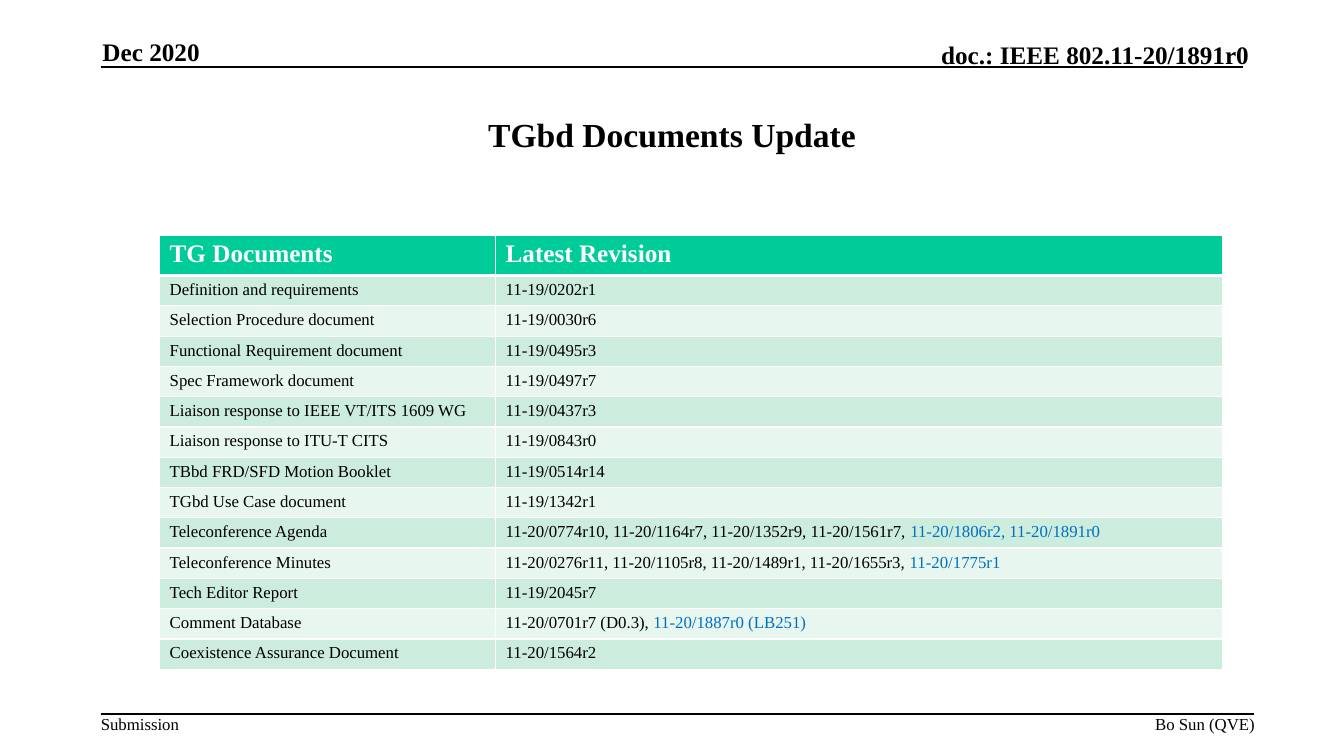
from typing import NamedTuple

from lxml import etree
from pptx import Presentation
from pptx.dml.color import RGBColor
from pptx.enum import shapes, text
from pptx.oxml import ns
from pptx import util as u

# The slide is a grid of 160 columns by 90 rows of equal size.
CELL = u.Inches(1) / 12
FONT = "Times New Roman"
BLACK, WHITE, BLUE = "000000", "FFFFFF", "0070C0"
HEADER_FILL = "00CC99"
BAND_FILLS = ("CCECDE", "E7F6EF")
LEFT, CENTER, RIGHT = text.PP_ALIGN.LEFT, text.PP_ALIGN.CENTER, text.PP_ALIGN.RIGHT
TOP, MIDDLE, BOTTOM = text.MSO_ANCHOR.TOP, text.MSO_ANCHOR.MIDDLE, text.MSO_ANCHOR.BOTTOM


class Label(NamedTuple):
    content: str
    col: float
    row: float
    cols: float
    rows: float
    size: int
    bold: bool
    align: text.PP_ALIGN
    anchor: text.MSO_ANCHOR


class Rule(NamedTuple):
    start: float
    end: float
    row: float


class Document(NamedTuple):
    name: str
    revisions: str
    new_revisions: str = ""


LABELS = (
    Label("Dec 2020", 12.2, 4.3, 32.8, 3.6, 18, True, LEFT, BOTTOM),
    Label("doc.: IEEE 802.11-20/1891r0", 87.5, 4.7, 61.2, 3.6, 18, True, RIGHT, BOTTOM),
    Label("TGbd Documents Update", 12, 9, 136, 14, 24, True, CENTER, MIDDLE),
    Label("Submission", 12, 85, 9.4, 2.4, 12, False, LEFT, TOP),
    Label("Bo Sun (QVE)", 93.7, 85, 55.7, 2.4, 12, False, RIGHT, TOP),
)
RULES = (Rule(12, 148, 8), Rule(12, 149.3, 85))
TABLE_COL, TABLE_ROW = 19, 28
COLUMN_WIDTHS = (40, 86.5)
HEADER_HEIGHT, BODY_HEIGHT = 4.4, 3.4
HEADINGS = ("TG Documents", "Latest Revision")
DOCUMENTS = (
    Document("Definition and requirements", "11-19/0202r1"),
    Document("Selection Procedure document", "11-19/0030r6"),
    Document("Functional Requirement document", "11-19/0495r3"),
    Document("Spec Framework document", "11-19/0497r7"),
    Document("Liaison response to IEEE VT/ITS 1609 WG", "11-19/0437r3"),
    Document("Liaison response to ITU-T CITS", "11-19/0843r0"),
    Document("TBbd FRD/SFD Motion Booklet", "11-19/0514r14"),
    Document("TGbd Use Case document", "11-19/1342r1"),
    Document("Teleconference Agenda",
             "11-20/0774r10, 11-20/1164r7, 11-20/1352r9, 11-20/1561r7, ",
             "11-20/1806r2, 11-20/1891r0"),
    Document("Teleconference Minutes",
             "11-20/0276r11, 11-20/1105r8, 11-20/1489r1, 11-20/1655r3, ",
             "11-20/1775r1"),
    Document("Tech Editor Report", "11-19/2045r7"),
    Document("Comment Database", "11-20/0701r7 (D0.3), ", "11-20/1887r0 (LB251)"),
    Document("Coexistence Assurance Document", "11-20/1564r2"),
)


def grid(units: float) -> int:
    return round(units * CELL)


def rgb(color: str) -> RGBColor:
    return RGBColor.from_string(color)


def add_run(p, content: str, size: int, color: str = BLACK, bold: bool = False) -> None:
    r = p.add_run()
    r.text = content
    r.font.name = FONT
    r.font.size = u.Pt(size)
    r.font.bold = bold
    r.font.color.rgb = rgb(color)


def add_label(slide, label: Label) -> None:
    sp = slide.shapes.add_textbox(grid(label.col), grid(label.row),
                                  grid(label.cols), grid(label.rows))
    tf = sp.text_frame
    tf.word_wrap = True
    tf.margin_left = tf.margin_right = tf.margin_top = tf.margin_bottom = 0
    tf.vertical_anchor = label.anchor
    p = tf.paragraphs[0]
    p.alignment = label.align
    add_run(p, label.content, label.size, bold=label.bold)


def add_rule(slide, rule: Rule) -> None:
    line = slide.shapes.add_connector(shapes.MSO_CONNECTOR.STRAIGHT,
                                      grid(rule.start), grid(rule.row),
                                      grid(rule.end), grid(rule.row))
    line.line.color.rgb = rgb(BLACK)
    line.line.width = u.Pt(1)
    etree.SubElement(line._element.spPr, ns.qn("a:effectLst"))


def style_cell(cell, fill: str, bottom: float = 1, top: float = 1) -> None:
    """Fill the cell and give it white borders, widths in points."""
    cell.fill.solid()
    cell.fill.fore_color.rgb = rgb(fill)
    tc_pr = cell._tc.get_or_add_tcPr()
    widths = {"a:lnL": 1, "a:lnR": 1, "a:lnT": top, "a:lnB": bottom}
    for i, (side, width) in enumerate(widths.items()):
        ln = etree.Element(ns.qn(side), w=str(u.Pt(width)))
        solid = etree.SubElement(ln, ns.qn("a:solidFill"))
        etree.SubElement(solid, ns.qn("a:srgbClr"), val=WHITE)
        tc_pr.insert(i, ln)


def add_document_table(slide) -> None:
    height = HEADER_HEIGHT + BODY_HEIGHT * len(DOCUMENTS)
    table = slide.shapes.add_table(len(DOCUMENTS) + 1, len(HEADINGS),
                                   grid(TABLE_COL), grid(TABLE_ROW),
                                   grid(sum(COLUMN_WIDTHS)), grid(height)).table
    for column, width in zip(table.columns, COLUMN_WIDTHS):
        column.width = grid(width)
    for i, row in enumerate(table.rows):
        row.height = grid(BODY_HEIGHT if i else HEADER_HEIGHT)

    for cell, heading in zip(table.rows[0].cells, HEADINGS):
        style_cell(cell, HEADER_FILL, bottom=3)
        add_run(cell.text_frame.paragraphs[0], heading, 18, WHITE, bold=True)

    for i, document in enumerate(DOCUMENTS):
        name, revisions = table.rows[i + 1].cells
        for cell in (name, revisions):
            style_cell(cell, BAND_FILLS[i % 2], top=1 if i else 3)
        add_run(name.text_frame.paragraphs[0], document.name, 12)
        p = revisions.text_frame.paragraphs[0]
        add_run(p, document.revisions, 12)
        if document.new_revisions:
            add_run(p, document.new_revisions, 12, BLUE)


def main() -> None:
    prs = Presentation()
    prs.slide_width, prs.slide_height = grid(160), grid(90)
    slide = prs.slides.add_slide(prs.slide_layouts[6])
    for rule in RULES:
        add_rule(slide, rule)
    for label in LABELS:
        add_label(slide, label)
    add_document_table(slide)
    prs.save("out.pptx")


if __name__ == "__main__":
    main()
